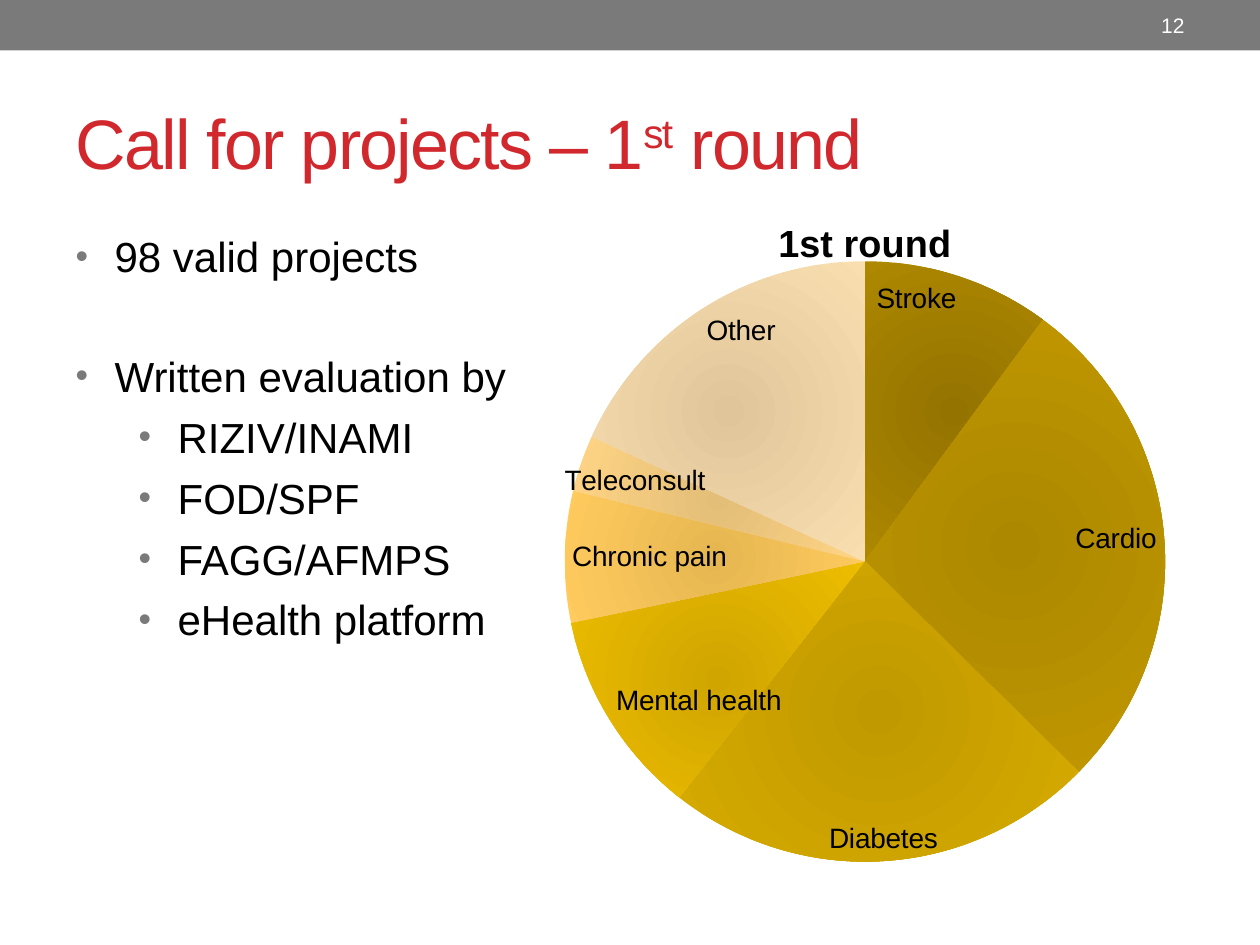
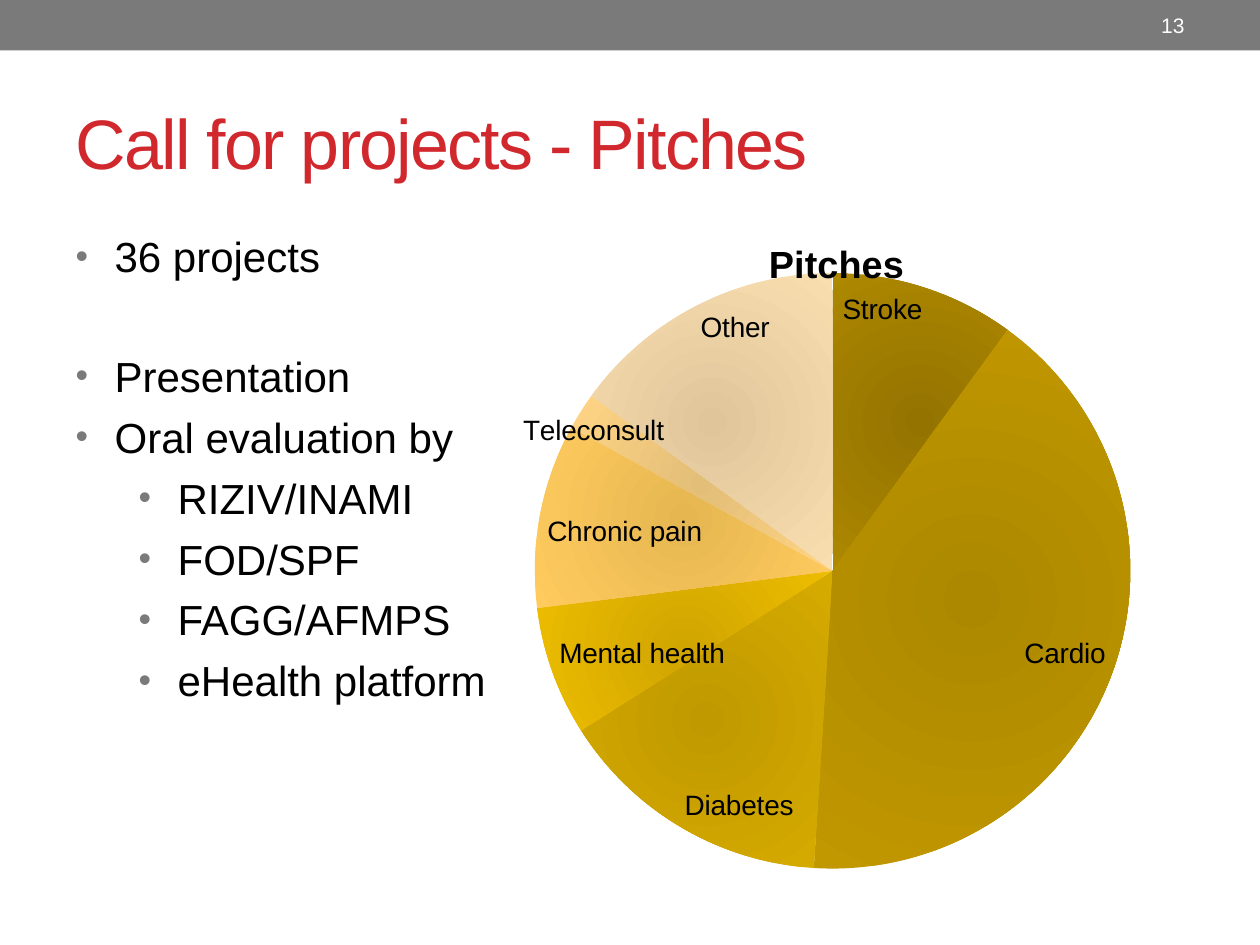
from pptx import Presentation
from pptx.chart.data import CategoryChartData
from pptx.dml.color import RGBColor
from pptx.enum.chart import XL_CHART_TYPE, XL_LABEL_POSITION as LabelPos
from pptx.enum.shapes import MSO_SHAPE
from pptx.enum.text import MSO_ANCHOR, MSO_AUTO_SIZE, PP_ALIGN
from pptx.oxml import parse_xml
from pptx.oxml.ns import nsdecls, qn
from pptx.util import Inches, Pt

FONT = "Arial"
GREY, RED, BLACK, WHITE = "7A7A7A", "D1282E", "000000", "FFFFFF"
LINE_GAP, GROUP_GAP = 6, 39.6

# Topic, colour at the middle of the slice, colour at its edge
TOPICS = [
    ("Stroke", "947300", "AD8800"),
    ("Cardio", "AC8800", "C29800"),
    ("Diabetes", "C09900", "D6AB00"),
    ("Mental health", "D0A500", "EDBD00"),
    ("Chronic pain", "E6B751", "FFCB5E"),
    ("Teleconsult", "E3BE78", "FFD485"),
    ("Other", "E0C59A", "F9DFB0"),
]
TELECONSULT = 5
EVALUATORS = [(1, name) for name in
              ("RIZIV/INAMI", "FOD/SPF", "FAGG/AFMPS", "eHealth platform")]


def rgb(color):
    return RGBColor.from_string(color)


def style_font(font, size, color, bold=False):
    font.name = FONT
    font.size = Pt(size)
    font.bold = bold
    font.color.rgb = rgb(color)


def place(shape, left, top, width, height):
    shape.left, shape.top = Inches(left), Inches(top)
    shape.width, shape.height = Inches(width), Inches(height)


def add_band(slide, number):
    """Grey band across the top with the slide number at its right."""
    band = slide.shapes.add_shape(MSO_SHAPE.RECTANGLE, 0, 0, Inches(10), Inches(0.4))
    band.shadow.inherit = False
    band.fill.solid()
    band.fill.fore_color.rgb = rgb(GREY)
    band.line.fill.background()

    number_box = slide.shapes.add_textbox(
        Inches(8.33), Inches(0.02), Inches(1.17), Inches(0.36))
    frame = number_box.text_frame
    frame.word_wrap = True
    frame.vertical_anchor = MSO_ANCHOR.MIDDLE
    frame.text = str(number)
    frame.paragraphs[0].alignment = PP_ALIGN.RIGHT
    style_font(frame.paragraphs[0].runs[0].font, 12, WHITE)


def set_title(slide, parts):
    """Write the title from (text, is_superscript) parts."""
    title = slide.shapes.title
    place(title, 0.5, 0.58, 9, 1.08)
    frame = title.text_frame
    frame.auto_size = MSO_AUTO_SIZE.NONE
    frame.vertical_anchor = MSO_ANCHOR.MIDDLE
    paragraph = frame.paragraphs[0]
    paragraph.alignment = PP_ALIGN.LEFT
    for text, is_superscript in parts:
        run = paragraph.add_run()
        run.text = text
        style_font(run.font, 40, RED)
        properties = run.font._element
        properties.set("spc", "-100")
        if is_superscript:
            properties.set("baseline", "30000")


def add_bullet(paragraph, level):
    properties = paragraph._p.get_or_add_pPr()
    properties.set("marL", str(Inches(0.31 + 0.5 * level)))
    properties.set("indent", str(Inches(-0.31)))
    for xml in (f'<a:buClr {nsdecls("a")}><a:srgbClr val="{GREY}"/></a:buClr>',
                f'<a:buSzPct {nsdecls("a")} val="85000"/>',
                f'<a:buFont {nsdecls("a")} typeface="{FONT}"/>',
                f'<a:buChar {nsdecls("a")} char="•"/>'):
        properties.append(parse_xml(xml))


def set_bullets(slide, items):
    """Fill the body with (level, text) items; the second opens a new group."""
    body = slide.placeholders[1]
    place(body, 0.5, 1.75, 9, 5.33)
    frame = body.text_frame
    frame.auto_size = MSO_AUTO_SIZE.NONE
    frame.margin_top = Inches(0.08)
    frame.text = "\n".join(text for _, text in items)
    for index, (paragraph, (level, _)) in enumerate(zip(frame.paragraphs, items)):
        paragraph.level = level
        add_bullet(paragraph, level)
        gaps = (0, GROUP_GAP)
        paragraph.space_before = Pt(gaps[index] if index < 2 else LINE_GAP)
        style_font(paragraph.runs[0].font, 24, BLACK)


def manual_layout(x, y, size=None):
    """Layout of a chart part; without a size, x and y are offsets."""
    fields = [("x", x), ("y", y)]
    if size:
        fields = [("layoutTarget", "inner"), ("xMode", "edge"), ("yMode", "edge"),
                  *fields, ("w", size[0]), ("h", size[1])]
    inner = "".join(f'<c:{tag} val="{value}"/>' for tag, value in fields)
    return parse_xml(f'<c:layout {nsdecls("c")}><c:manualLayout>{inner}'
                     '</c:manualLayout></c:layout>')


def color_slices(series):
    for index, (_, middle, edge) in enumerate(TOPICS):
        fill = series.points[index].format.fill
        fill.gradient()
        for stop, color in zip(fill.gradient_stops, (middle, edge)):
            stop.color.rgb = rgb(color)
    for linear in list(series._element.iter(qn("a:lin"))):
        radial = parse_xml(
            f'<a:path {nsdecls("a")} path="circle">'
            '<a:fillToRect l="50000" t="50000" r="50000" b="50000"/></a:path>')
        linear.getparent().replace(linear, radial)


def label_slices(series, teleconsult_shift):
    labels = series.data_labels
    labels.show_category_name = True
    labels.show_value = False
    labels.show_percentage = False
    labels.position = LabelPos.INSIDE_END
    style_font(labels.font, 16, BLACK)

    moved = series.points[TELECONSULT].data_label
    moved.position = LabelPos.INSIDE_END
    style_font(moved.font, 16, BLACK)
    label = series._element.find(".//" + qn("c:dLbl"))
    label.find(qn("c:showVal")).set("val", "0")
    label.find(qn("c:showCatName")).set("val", "1")
    label.find(qn("c:idx")).addnext(manual_layout(teleconsult_shift, 0))


def add_topic_pie(slide, heading, values, box, plot, teleconsult_shift):
    data = CategoryChartData()
    data.categories = [topic for topic, *_ in TOPICS]
    data.add_series("Series 1", values)
    chart = slide.shapes.add_chart(
        XL_CHART_TYPE.PIE, *(Inches(length) for length in box), data).chart
    style_font(chart.font, 18, BLACK)
    chart.has_legend = False
    chart.has_title = True
    chart.chart_title.text_frame.text = heading
    style_font(chart.chart_title.text_frame.paragraphs[0].runs[0].font, 21.6, BLACK, True)

    plot_area = chart._chartSpace.chart.plotArea
    for layout in plot_area.findall(qn("c:layout")):
        plot_area.remove(layout)
    plot_area.insert(0, manual_layout(*plot[:2], size=plot[2:]))

    series = chart.plots[0].series[0]
    color_slices(series)
    label_slices(series, teleconsult_shift)


def add_call_slide(prs, number, title, bullets, **pie):
    slide = prs.slides.add_slide(prs.slide_layouts[1])
    add_band(slide, number)
    set_title(slide, title)
    set_bullets(slide, bullets)
    add_topic_pie(slide, **pie)


def main():
    prs = Presentation()
    prs.slide_width, prs.slide_height = Inches(10), Inches(7.5)
    add_call_slide(
        prs, 12,
        [("Call for projects – 1", False), ("st", True), (" round", False)],
        [(0, "98 valid projects"), (0, "Written evaluation by"), *EVALUATORS],
        heading="1st round",
        values=(10, 27, 23, 11, 7, 3, 18),
        box=(3.73, 1.49, 6.27, 6.82),
        plot=(0.12, 0.06, 0.76, 0.75),
        teleconsult_shift=-0.03)
    add_call_slide(
        prs, 13,
        [("Call for projects - Pitches", False)],
        [(0, "36 projects"), (0, "Presentation"), (0, "Oral evaluation by"), *EVALUATORS],
        heading="Pitches",
        values=(10, 41, 15, 7, 10, 2, 15),
        box=(3.45, 1.67, 6.38, 6.22),
        plot=(0.09, 0.08, 0.81, 0.76),
        teleconsult_shift=-0.08)
    prs.save("out.pptx")


if __name__ == "__main__":
    main()
